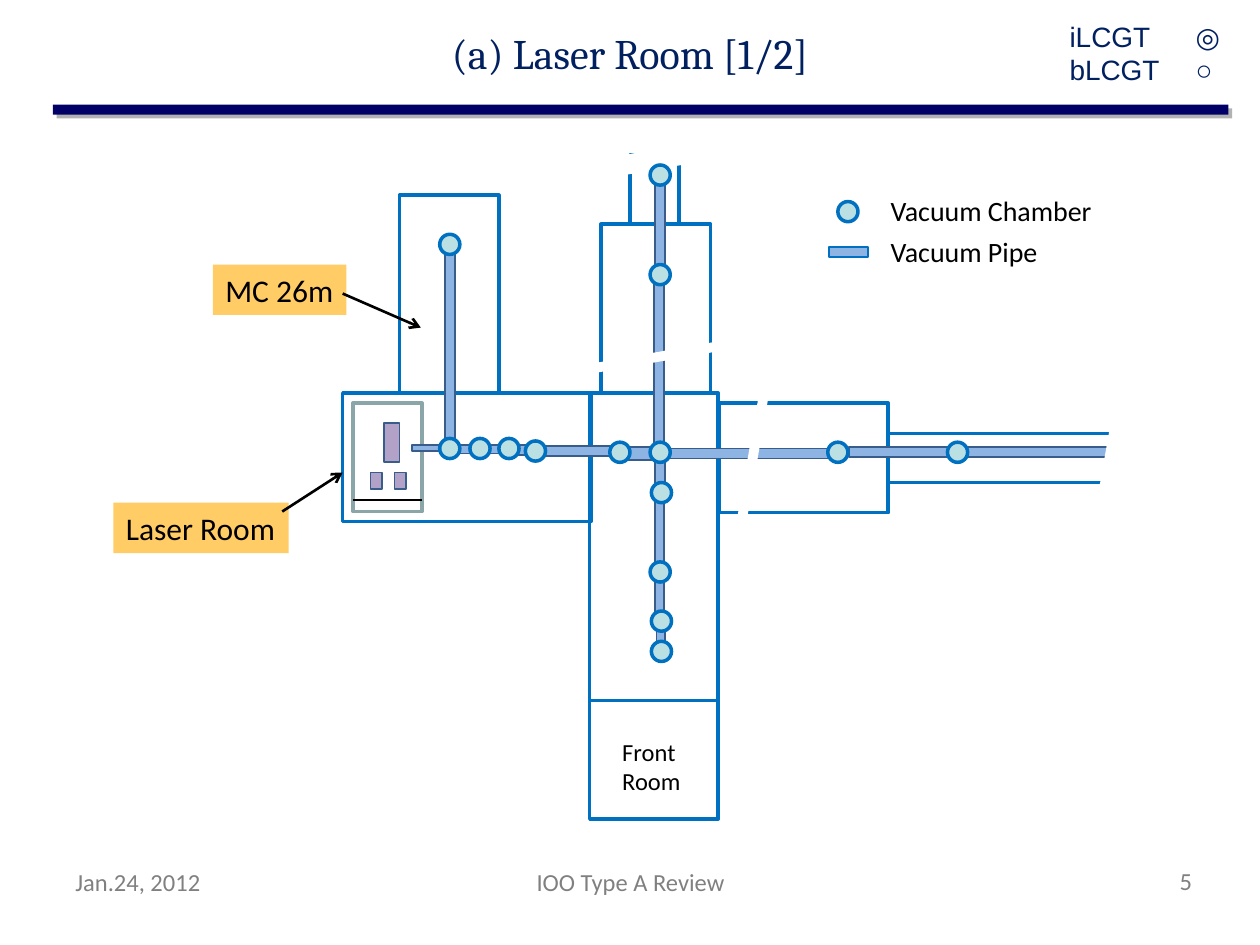
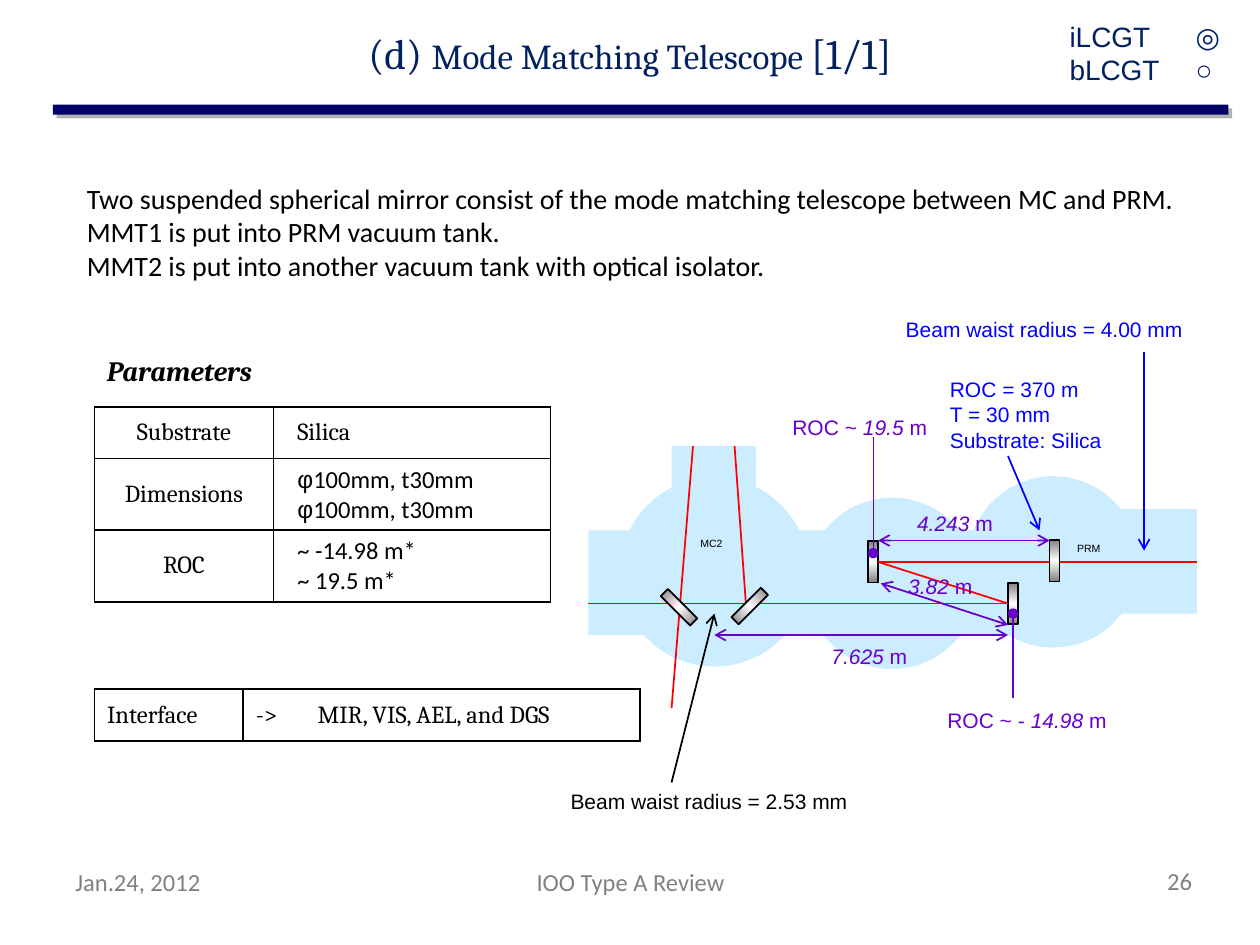
from dataclasses import dataclass
from typing import Optional

from lxml.etree import SubElement
from pptx import Presentation
from pptx.dml.color import RGBColor
from pptx.enum.shapes import MSO_CONNECTOR, MSO_SHAPE
from pptx.enum.text import MSO_ANCHOR, MSO_AUTO_SIZE, PP_ALIGN
from pptx.oxml.ns import qn
from pptx.util import Inches, Pt

BLACK = RGBColor(0x00, 0x00, 0x00)
WHITE = RGBColor(0xFF, 0xFF, 0xFF)
GREY = RGBColor(0x80, 0x80, 0x80)
SHADE = RGBColor(0xB2, 0xB2, 0xB2)
BAND = RGBColor(0x00, 0x00, 0x66)
NAVY = RGBColor(0x00, 0x20, 0x60)
WALL = RGBColor(0x00, 0x70, 0xC0)
PIPE = RGBColor(0x8E, 0xB4, 0xE3)
PIPE_EDGE = RGBColor(0x38, 0x5D, 0x8A)
CHAMBER = RGBColor(0xBB, 0xE0, 0xE3)
BENCH = RGBColor(0x8A, 0xA6, 0xA8)
DEVICE = RGBColor(0xB3, 0xA2, 0xC7)
LABEL = RGBColor(0xFF, 0xCC, 0x66)
TANK = RGBColor(0xCC, 0xEC, 0xFF)
RED = RGBColor(0xFF, 0x00, 0x00)
BLUE = RGBColor(0x00, 0x00, 0xFF)
PURPLE = RGBColor(0x66, 0x00, 0xCC)

RECT, OVAL = MSO_SHAPE.RECTANGLE, MSO_SHAPE.OVAL
DOT = 0.16
MIRROR_W, MIRROR_H = 0.08, 0.33


@dataclass
class Run:
    """A stretch of text with its own format."""
    text: str
    size: Optional[float] = None
    font: Optional[str] = None
    italic: Optional[bool] = None


@dataclass
class Style:
    """Fill and outline of a shape."""
    fill: Optional[RGBColor] = None
    line: Optional[RGBColor] = None
    width: float = 1


@dataclass
class Line:
    """A straight line with optional ends."""
    x1: float
    y1: float
    x2: float
    y2: float
    color: RGBColor
    width: float = 1
    head: str = ""
    tail: str = ""


@dataclass
class Note:
    """A label that does not wrap."""
    box: tuple
    paras: list
    size: float = 12
    color: RGBColor = BLACK


ROOM = Style(line=WALL, width=2)
TUBE = Style(PIPE, PIPE_EDGE)
VESSEL = Style(CHAMBER, WALL, 2)
GAP = Style(WHITE, WHITE, 2)


def write_text(tf, paras, *, size, font="Calibri", color=BLACK, bold=None, italic=None,
               align=None, indent=0.0, tab=0.0) -> None:
    """Fill a text frame with paragraphs of strings or runs."""
    for i, para in enumerate(paras):
        p = tf.paragraphs[0] if i == 0 else tf.add_paragraph()
        if align is not None:
            p.alignment = align
        pPr = p._p.get_or_add_pPr()
        if indent:
            pPr.set("marL", str(Inches(indent)))
            pPr.set("indent", "0")
        if tab:
            tabs = SubElement(pPr, qn("a:tabLst"))
            SubElement(tabs, qn("a:tab"), pos=str(Inches(tab)), algn="l")
        for run in [Run(para)] if isinstance(para, str) else para:
            r = p.add_run()
            r.text = run.text
            r.font.size = Pt(run.size or size)
            r.font.name = run.font or font
            r.font.bold = bold
            r.font.italic = italic if run.italic is None else run.italic
            r.font.color.rgb = color


def add_text(slide, box, paras, *, wrap=False, anchor=MSO_ANCHOR.TOP, fill=None, **fmt):
    """Add a text box."""
    sp = slide.shapes.add_textbox(*map(Inches, box))
    tf = sp.text_frame
    tf.word_wrap = wrap
    tf.auto_size = MSO_AUTO_SIZE.NONE if wrap else MSO_AUTO_SIZE.SHAPE_TO_FIT_TEXT
    tf.vertical_anchor = anchor
    if fill is not None:
        sp.fill.solid()
        sp.fill.fore_color.rgb = fill
    write_text(tf, paras, **fmt)
    return sp


def add_box(slide, box, style: Style, kind=RECT, rotation=0.0):
    """Add a preset shape without shadow."""
    sp = slide.shapes.add_shape(kind, *map(Inches, box))
    sp.shadow.inherit = False
    sp.rotation = rotation
    if style.fill is None:
        sp.fill.background()
    else:
        sp.fill.solid()
        sp.fill.fore_color.rgb = style.fill
    if style.line is None:
        sp.line.fill.background()
    else:
        sp.line.color.rgb = style.line
        sp.line.width = Pt(style.width)
    return sp


def add_line(slide, ln: Line):
    """Add a straight connector."""
    cxn = slide.shapes.add_connector(
        MSO_CONNECTOR.STRAIGHT, *map(Inches, (ln.x1, ln.y1, ln.x2, ln.y2)))
    cxn.line.color.rgb = ln.color
    cxn.line.width = Pt(ln.width)
    spPr = cxn._element.spPr
    for tag, end in (("a:headEnd", ln.head), ("a:tailEnd", ln.tail)):
        if end:
            SubElement(spPr.find(qn("a:ln")), qn(tag), type=end)
    SubElement(spPr, qn("a:effectLst"))
    return cxn


def add_mirror(slide, cx: float, cy: float, rotation=0.0):
    """Add a mirror with a metallic gradient, centred on a point."""
    box = (cx - MIRROR_W / 2, cy - MIRROR_H / 2, MIRROR_W, MIRROR_H)
    sp = add_box(slide, box, Style(WHITE, BLACK), rotation=rotation)
    sp.fill.gradient()
    sp.fill.gradient_angle = 90
    stops = sp._element.spPr.find(".//" + qn("a:gsLst"))
    stops.clear()
    for pos, color in ((0, GREY), (50000, WHITE), (100000, GREY)):
        gs = SubElement(stops, qn("a:gs"), pos=str(pos))
        SubElement(gs, qn("a:srgbClr"), val=str(color))
    return sp


def add_grid(slide, left: float, top: float, cols, heights, rows) -> None:
    """Add a bordered table; each cell is its paragraphs and its format."""
    box = map(Inches, (left, top, sum(cols), sum(heights)))
    table = slide.shapes.add_table(len(heights), len(cols), *box).table
    table.first_row = table.horz_banding = False
    for col, w in zip(table.columns, cols):
        col.width = Inches(w)
    for row, h, cells in zip(table.rows, heights, rows):
        row.height = Inches(h)
        for cell, (paras, fmt) in zip(row.cells, cells):
            cell.vertical_anchor = MSO_ANCHOR.MIDDLE
            write_text(cell.text_frame, paras, size=14, **{"font": "Cambria", **fmt})
            tcPr = cell._tc.get_or_add_tcPr()
            for side in ("a:lnL", "a:lnR", "a:lnT", "a:lnB"):
                edge = SubElement(tcPr, qn(side), w=str(Pt(1)))
                SubElement(SubElement(edge, qn("a:solidFill")), qn("a:srgbClr"), val=str(BLACK))
            cell.fill.background()


def add_base(prs, title, number: int):
    """Add a slide with its title, band, status and footers."""
    slide = prs.slides.add_slide(prs.slide_layouts[5])
    add_box(slide, (0.45, 0.86, 9.33, 0.08), Style(SHADE))
    add_box(slide, (0.42, 0.83, 9.33, 0.08), Style(BAND))
    sp = slide.shapes.title
    sp.left, sp.top, sp.width, sp.height = map(Inches, (0, 0, 10, 0.84))
    sp.text_frame.vertical_anchor = MSO_ANCHOR.MIDDLE
    write_text(sp.text_frame, [title], size=24, font="Cambria", color=NAVY)
    add_text(slide, (8.39, 0, 1.61, 0.84), ["iLCGT\t◎", "bLCGT\t○"], wrap=True,
             anchor=MSO_ANCHOR.MIDDLE, size=16, font="Arial", color=NAVY)
    for box, text, align in (
            ((0.5, 6.83, 2.33, 0.52), "Jan.24, 2012", PP_ALIGN.LEFT),
            ((3.42, 6.83, 3.17, 0.52), "IOO Type A Review", PP_ALIGN.CENTER),
            ((8.73, 6.82, 0.83, 0.52), str(number), PP_ALIGN.RIGHT)):
        add_text(slide, box, [text], wrap=True, size=14, color=GREY, align=align)
    return slide


def build_laser_room(prs) -> None:
    """Draw the floor plan of the laser room."""
    slide = add_base(prs, "(a) Laser Room [1/2]", 5)
    rooms = [(4.68, 3.12, 1.02, 2.44), (2.72, 3.12, 1.97, 1.02), (3.17, 1.55, 0.79, 1.57),
             (5.71, 3.2, 1.34, 0.87), (4.77, 1.78, 0.87, 1.34), (7.05, 3.44, 1.81, 0.39),
             (5, 1.23, 0.39, 0.55), (4.68, 5.56, 1.02, 0.94)]
    pipes = [(5.24, 3.56, 1.42, 0.08), (6.74, 3.55, 2.12, 0.08), (5.19, 2.18, 0.08, 1.42),
             (5.2, 1.23, 0.08, 0.95), (5.2, 3.92, 0.07, 0.61), (5.2, 3.62, 0.08, 0.27),
             (4.95, 3.55, 0.24, 0.1), (4.25, 3.54, 0.67, 0.08), (4.02, 3.53, 0.23, 0.08),
             (3.62, 3.53, 0.42, 0.07), (3.53, 1.95, 0.08, 1.58), (5.2, 4.54, 0.07, 0.4),
             (5.21, 4.92, 0.07, 0.26)]
    gaps = [((5.95, 3.03, 0.05, 1.2), 10), ((5.13, 2.29, 0.05, 1.11), 80),
            ((8.78, 3.21, 0.16, 0.87), 10), ((5.2, 0.82, 0.13, 0.87), 80)]
    devices = [(3.05, 3.36, 0.12, 0.31), (2.94, 3.75, 0.09, 0.13), (3.13, 3.75, 0.09, 0.13)]
    chambers = [(3.49, 1.86), (3.49, 3.48), (3.73, 3.48), (3.96, 3.48), (4.17, 3.5),
                (4.84, 3.51), (5.16, 3.51), (6.57, 3.51), (7.52, 3.51), (5.16, 1.31),
                (5.16, 2.1), (5.17, 3.83), (5.16, 4.46), (5.17, 4.85), (5.17, 5.09),
                (6.65, 1.6)]
    for box in rooms:
        add_box(slide, box, ROOM)
    for box in pipes:
        add_box(slide, box, TUBE)
    for box, angle in gaps:
        add_box(slide, box, GAP, rotation=angle)
    add_box(slide, (2.8, 3.2, 0.55, 0.86), Style(WHITE, BENCH, 2))
    add_box(slide, (3.27, 3.53, 0.24, 0.05), TUBE)
    for box in devices:
        add_box(slide, box, Style(DEVICE, PIPE_EDGE))
    for x, y in chambers:
        add_box(slide, (x, y, DOT, DOT), VESSEL, OVAL)
    add_box(slide, (6.58, 1.96, 0.31, 0.08), Style(PIPE, WALL))
    for box, text in (((0.9, 3.99, 1.39, 0.4), "Laser Room"), ((1.69, 2.1, 1.06, 0.4), "MC 26m")):
        add_text(slide, box, [text], size=18, fill=LABEL)
    for note in (Note((6.97, 1.49, 1.81, 0.37), ["Vacuum Chamber"], 16),
                 Note((6.97, 1.81, 1.38, 0.37), ["Vacuum Pipe"], 16),
                 Note((4.84, 5.8, 0.67, 0.57), ["Front", "Room"], 14)):
        add_text(slide, note.box, note.paras, size=note.size)
    for ln in (Line(2.72, 2.33, 3.34, 2.6, BLACK, 1.5, tail="arrow"),
               Line(2.24, 4.06, 2.72, 3.75, BLACK, 1.5, tail="arrow"),
               Line(3.35, 3.97, 2.8, 3.97, BLACK, 1.5)):
        add_line(slide, ln)


def draw_telescope(slide) -> None:
    """Draw the tanks, mirrors, beams and dimensions of the telescope."""
    for kind, box in ((OVAL, (6.4, 3.95, 1.36, 1.36)), (RECT, (8.5, 4.04, 1, 0.83)),
                      (OVAL, (7.68, 3.78, 1.36, 1.36)), (RECT, (4.67, 4.21, 3.33, 0.83)),
                      (OVAL, (4.92, 3.79, 1.5, 1.5)), (RECT, (5.33, 3.54, 0.67, 0.75))):
        add_box(slide, box, Style(TANK), kind)
    mmt1 = add_mirror(slide, 6.93, 4.46)
    mmt2 = add_mirror(slide, 8.04, 4.79)
    add_line(slide, Line(8, 4.79, 4.67, 4.79, RED)).begin_connect(mmt2, 1)
    add_line(slide, Line(9.5, 4.46, 6.97, 4.46, RED)).end_connect(mmt1, 3)
    folded = add_line(slide, Line(8, 4.79, 6.97, 4.46, RED))
    folded.begin_connect(mmt2, 1)
    folded.end_connect(mmt1, 3)
    for ln in (Line(5.5, 3.54, 5.33, 5.62, RED), Line(5.83, 3.54, 5.92, 4.79, RED)):
        add_line(slide, ln)
    for cx, cy, angle in ((5.39, 4.82, 315), (5.95, 4.81, 45), (8.37, 4.45, 0)):
        add_mirror(slide, cx, cy, angle)
    for ln in (Line(5.33, 6.21, 5.67, 4.87, BLACK, tail="arrow"),
               Line(9.08, 2.79, 9.08, 4.37, BLUE, tail="arrow"),
               Line(8, 3.62, 8.25, 4.21, BLUE, tail="arrow"),
               Line(5.67, 5.04, 8, 5.04, PURPLE, head="arrow", tail="arrow"),
               Line(6.99, 4.63, 8, 4.96, PURPLE, head="arrow", tail="arrow"),
               Line(6.97, 4.29, 8.33, 4.29, PURPLE, head="arrow", tail="arrow"),
               Line(6.93, 3.47, 6.93, 4.39, PURPLE, 0.75, tail="oval"),
               Line(8.04, 5.54, 8.04, 4.87, PURPLE, 0.75, tail="oval")):
        add_line(slide, ln)
    notes = [Note((8.45, 4.25, 0.39, 0.2), ["PRM"], 6),
             Note((5.46, 4.21, 0.38, 0.2), ["MC2"], 6),
             Note((4.43, 6.21, 2.4, 0.3), ["Beam waist radius = 2.53 mm"]),
             Note((7.09, 2.46, 2.4, 0.3), ["Beam waist radius = 4.00 mm"], color=BLUE),
             Note((7.44, 2.94, 1.42, 0.71),
                  ["ROC = 370 m", "T = 30 mm", "Substrate: Silica"], color=BLUE)]
    for box, before, value, unit in (((6.5, 5.06, 0.81, 0.3), "", "7.625", " m"),
                                     ((7.11, 4.5, 0.72, 0.3), "", "3.82", " m"),
                                     ((7.18, 4, 0.81, 0.3), "", "4.243", " m"),
                                     ((6.19, 3.24, 1.28, 0.3), "ROC ~ ", "19.5 ", "m"),
                                     ((7.42, 5.57, 1.48, 0.3), "ROC ~ - ", "14.98 ", "m")):
        runs = [Run(before)] if before else []
        notes.append(Note(box, [runs + [Run(value, italic=True), Run(unit)]], color=PURPLE))
    for note in notes:
        add_text(slide, note.box, note.paras, size=note.size, font="Arial", color=note.color)


def build_telescope(prs) -> None:
    """Build the mode matching telescope slide."""
    title = [Run("(d) "), Run("Mode Matching Telescope ", 20), Run("[1/1]")]
    slide = add_base(prs, title, 26)
    add_text(slide, (0.59, 1.39, 8.99, 0.91), [
        "Two suspended spherical mirror consist of the mode matching telescope between MC and PRM.",
        "MMT1 is put into PRM vacuum tank.",
        "MMT2 is put into another vacuum tank with optical isolator."], size=16)
    draw_telescope(slide)
    add_text(slide, (0.75, 2.76, 1.42, 0.37), ["Parameters"], size=16, font="Cambria",
             bold=True, italic=True)
    name, value = {"align": PP_ALIGN.CENTER}, {"indent": 0.09}
    plain = {**value, "font": "Calibri"}
    disc = [Run("φ", font="Arial"), Run("100mm, t30mm")]
    add_grid(slide, 0.75, 3.23, (1.42, 2.2), (0.41, 0.56, 0.57), [
        [(["Substrate"], name), (["Silica"], value)],
        [(["Dimensions"], name), ([disc, disc], plain)],
        [(["ROC"], name), (["~ -14.98 m*", "~ 19.5 m*"], plain)]])
    add_grid(slide, 0.75, 5.47, (1.18, 3.15), (0.41,), [
        [(["Interface"], {}), (["->\tMIR, VIS, AEL, and DGS"], {"tab": 0.49})]])


def main() -> None:
    """Build and save the presentation."""
    prs = Presentation()
    prs.slide_width, prs.slide_height = Inches(10), Inches(7.5)
    build_laser_room(prs)
    build_telescope(prs)
    prs.save("out.pptx")


if __name__ == "__main__":
    main()
